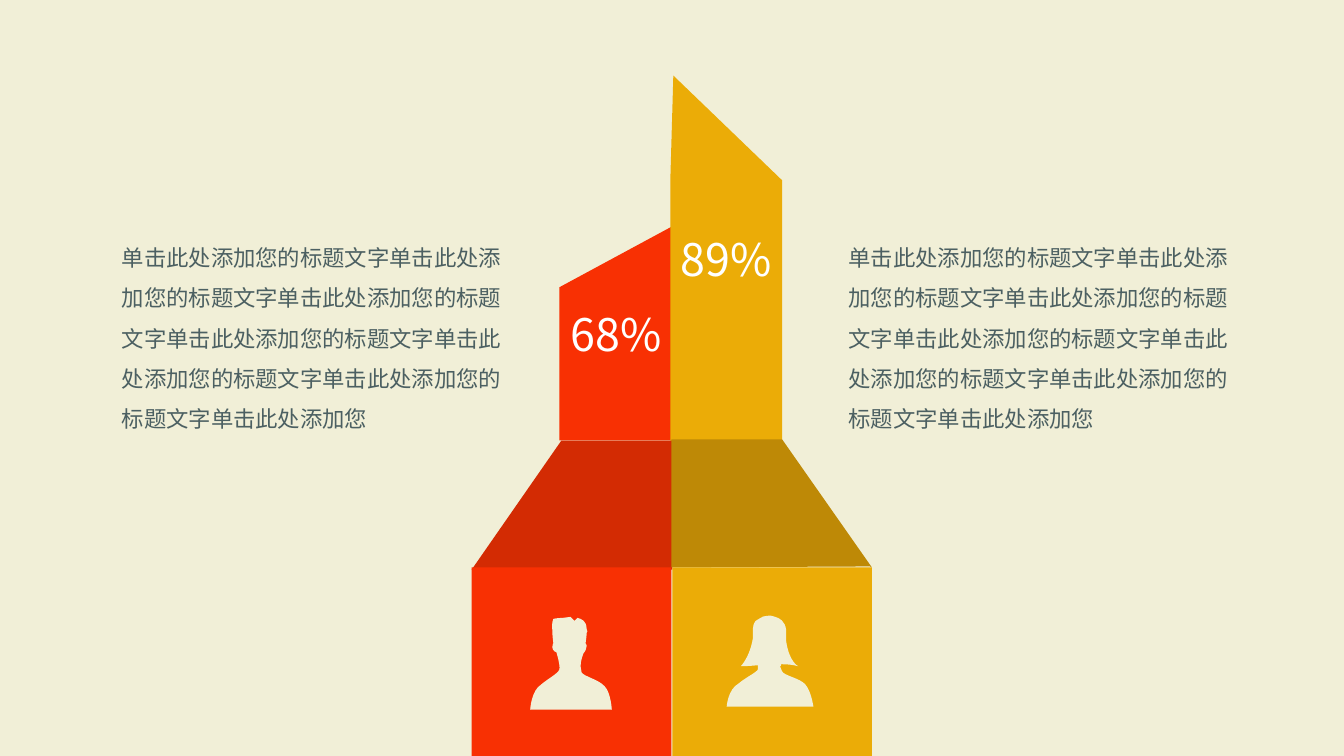
from lxml import etree
from pptx import Presentation
from pptx.dml.color import RGBColor
from pptx.enum.shapes import MSO_SHAPE
from pptx.enum.text import MSO_ANCHOR, MSO_AUTO_SIZE, PP_ALIGN
from pptx.oxml.ns import qn
from pptx.util import Pt

PX = 9144  # one px is a hundredth of an inch
HIGH = 750 * PX
WIDE = HIGH * 16 // 9
FONT = "Noto Sans CJK SC"
RECT = MSO_SHAPE.RECTANGLE
LEFT, CENTER = PP_ALIGN.LEFT, PP_ALIGN.CENTER
MIDDLE = MSO_ANCHOR.MIDDLE
GROW = MSO_AUTO_SIZE.SHAPE_TO_FIT_TEXT

CREAM = RGBColor(0xF1, 0xEF, 0xD7)
RED = RGBColor(0xF8, 0x30, 0x03)
RUST = RGBColor(0xD3, 0x2B, 0x03)
GOLD = RGBColor(0xEB, 0xAC, 0x07)
OCHRE = RGBColor(0xBE, 0x89, 0x06)
SLATE = RGBColor(0x4C, 0x60, 0x62)
WHITE = RGBColor(0xFF, 0xFF, 0xFF)

BODY = "单击此处添加您的标题文字" * 6 + "单击此处添加您"

# Each row of a bust is one cubic curve: two control points and an end point.
MAN = [
    (68, 62, 53, 59, 51, 55), (51, 53, 50, 51, 50, 49),
    (50, 43, 53, 36, 53, 36), (53, 36, 54, 35, 55, 33),
    (56, 31, 56, 28, 56, 28), (56, 28, 55, 27, 55, 26),
    (55, 24, 56, 21, 56, 16), (57, 15, 57, 14, 56, 12),
    (56, 4, 51, 2, 47, 1), (44, 4, 44, 4, 44, 4),
    (40, 0, 40, 0, 40, 0), (37, 0, 35, 1, 32, 1),
    (27, 1, 23, 2, 23, 2), (23, 2, 21, 6, 22, 13),
    (22, 20, 23, 26, 23, 26), (23, 26, 22, 27, 22, 30),
    (22, 34, 26, 35, 26, 35), (26, 35, 30, 48, 29, 52),
    (28, 56, 18, 61, 11, 67), (1, 73, 0, 92, 0, 92),
    (81, 92, 81, 92, 81, 92), (81, 92, 80, 75, 74, 69),
]
WOMAN = [
    (73, 63, 56, 60, 55, 56), (55, 55, 53, 53, 53, 51),
    (54, 51, 54, 50, 54, 49), (65, 49, 71, 51, 71, 51),
    (71, 51, 62, 47, 59, 26), (59, 24, 59, 19, 59, 15),
    (58, 6, 52, 3, 48, 2), (45, 1, 42, 0, 40, 1),
    (37, 1, 35, 2, 32, 4), (26, 6, 26, 12, 26, 17),
    (26, 18, 26, 21, 26, 23), (23, 42, 14, 51, 14, 51),
    (14, 51, 21, 51, 31, 50), (31, 51, 31, 53, 31, 54),
    (30, 57, 19, 62, 12, 68), (1, 74, 0, 91, 0, 91),
    (86, 91, 86, 91, 86, 91), (86, 91, 84, 76, 78, 69),
]

# All places are relative to the tower's box.
HALVES = [
    dict(label="68%", face=RED, shade=RUST, base=0, icon=(58, 537), bust=MAN,
         bar=[(198, 210), (198, 362), (87, 362), (87, 210), (200, 149)],
         slope=[(0, 490), (89, 362), (199, 362), (199, 490), (2, 489)]),
    dict(label="89%", face=GOLD, shade=OCHRE, base=199, icon=(253, 535), bust=WOMAN,
         bar=[(197, 104), (197, 363), (308, 363), (308, 104), (200, 0)],
         slope=[(397, 488), (308, 361), (198, 361), (198, 488), (395, 487)]),
]


def write(shape, text, size, color, align=LEFT, space=None):
    para = shape.text_frame.paragraphs[0]
    para.alignment = align
    para.line_spacing = space
    run = para.add_run()
    run.text = text
    run.font.size = Pt(size)
    run.font.name = FONT
    run.font.color.rgb = color
    etree.SubElement(run.font._element, qn("a:ea"), typeface=FONT)


def paint(shape, color):
    shape.shadow.inherit = False
    shape.fill.solid()
    shape.fill.fore_color.rgb = color
    shape.line.fill.background()
    return shape


def outline(slide, left, top, points, color):
    """Fill a closed outline whose points are relative to left and top."""
    spots = [((left + x) * PX, (top + y) * PX) for x, y in points]
    pen = slide.shapes.build_freeform(*spots[0], scale=1.0)
    pen.add_line_segments(spots[1:], close=True)
    return paint(pen.convert_to_shape(), color)


def portrait(slide, left, top, curves):
    """Outline the curves' end points, then bend each side into its curve."""
    ends = [curve[4:] for curve in curves]
    shape = outline(slide, left, top, ends[-1:] + ends, CREAM)
    low = [min(axis) for axis in zip(*ends)]
    sides = list(shape._element.iter(qn("a:lnTo")))
    for side, curve in zip(sides, curves):
        bend = etree.Element(qn("a:cubicBezTo"))
        for x, y in zip(curve[::2], curve[1::2]):
            etree.SubElement(bend, qn("a:pt"), x=str((x - low[0]) * PX),
                             y=str((y - low[1]) * PX))
        side.getparent().replace(side, bend)


def tower(slide, left, top):
    for half in HALVES:
        bar = outline(slide, left, top, half["bar"], half["face"])
        bar.text_frame.word_wrap = False
        bar.text_frame.vertical_anchor = MIDDLE
        write(bar, half["label"], 32, WHITE, align=CENTER)
    for half in HALVES:
        outline(slide, left, top, half["slope"], half["shade"])
    for half in HALVES:
        base = slide.shapes.add_shape(RECT, (left + half["base"]) * PX,
                                      (top + 488) * PX, 198 * PX, 187 * PX)
        paint(base, half["face"])
    for half in HALVES:
        x, y = half["icon"]
        portrait(slide, left + x, top + y, half["bust"])


def note(slide, left, top, width, height):
    box = slide.shapes.add_textbox(left * PX, top * PX, width * PX, height * PX)
    box.text_frame.word_wrap = True
    box.text_frame.auto_size = GROW
    write(box, BODY, 16, SLATE, space=1.5)


def main():
    deck = Presentation()
    deck.slide_width, deck.slide_height = WIDE, HIGH
    slide = deck.slides.add_slide(deck.slide_layouts[6])
    slide.background.fill.solid()
    slide.background.fill.fore_color.rgb = CREAM
    tower(slide, 468, 75)
    for left in (832, 111):
        note(slide, left, 224, 414, 212)
    deck.save("out.pptx")


if __name__ == "__main__":
    main()
